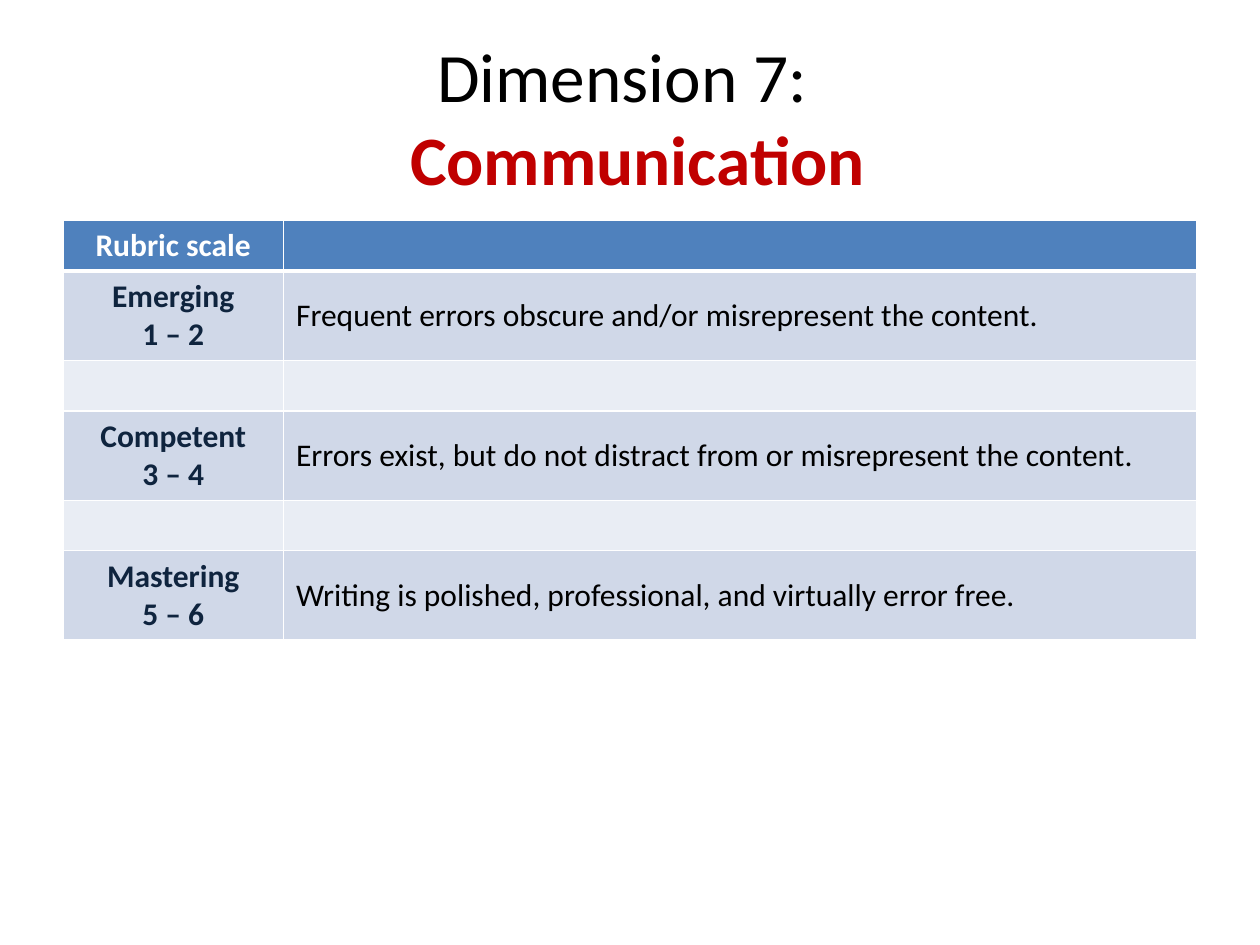
from dataclasses import dataclass

from lxml.etree import SubElement
from pptx import Presentation
from pptx.dml.color import RGBColor
from pptx.enum.text import MSO_ANCHOR as Anchor, PP_ALIGN as Align
from pptx.oxml.ns import qn
from pptx.util import Inches, Pt

FONT = "Calibri"
BLACK = RGBColor(0x00, 0x00, 0x00)
WHITE = RGBColor(0xFF, 0xFF, 0xFF)
RED = RGBColor(0xC0, 0x00, 0x00)
NAVY = RGBColor(0x0F, 0x24, 0x3E)
HEADER_BLUE = RGBColor(0x4F, 0x81, 0xBD)
BAND_DARK = RGBColor(0xD0, 0xD8, 0xE8)
BAND_LIGHT = RGBColor(0xE9, 0xED, 0xF4)

SLIDE_WIDTH, SLIDE_HEIGHT = Inches(10), Inches(7.5)
MARGIN = int(SLIDE_WIDTH * 0.05)
CONTENT_WIDTH = SLIDE_WIDTH - 2 * MARGIN
TITLE_TOP, TITLE_HEIGHT = Inches(0.3), Inches(1.25)
TABLE_TOP = Inches(1.75)
COLUMN_WIDTHS = Inches(1.75), Inches(7.25)
ONE_LINE, TWO_LINES = Inches(0.4), Inches(0.71)

TITLE_FORMAT = {"name": FONT, "size": Pt(39.6)}
CELL_FORMAT = {"name": FONT, "size": Pt(18)}


@dataclass(frozen=True)
class RubricRow:
    height: int
    fill: RGBColor
    level: tuple[str, ...] = ("",)
    description: str = ""
    level_color: RGBColor = NAVY
    anchor: Anchor = Anchor.MIDDLE


HEADER = RubricRow(ONE_LINE, HEADER_BLUE, ("Rubric scale",),
                   level_color=WHITE, anchor=Anchor.TOP)
SPACER = RubricRow(ONE_LINE, BAND_LIGHT)
RUBRIC = [
    HEADER,
    RubricRow(TWO_LINES, BAND_DARK, ("Emerging", "1 – 2"),
              "Frequent errors obscure and/or misrepresent the content."),
    SPACER,
    RubricRow(TWO_LINES, BAND_DARK, ("Competent", "3 – 4"),
              "Errors exist, but do not distract from or misrepresent the content."),
    SPACER,
    RubricRow(TWO_LINES, BAND_DARK, ("Mastering", "5 – 6"),
              "Writing is polished, professional, and virtually error free."),
]


def format_font(font, color: RGBColor, bold: bool, values: dict) -> None:
    for attribute, value in {**values, "bold": bold}.items():
        setattr(font, attribute, value)
    font.color.rgb = color


def add_title(slide) -> None:
    title = slide.shapes.add_textbox(MARGIN, TITLE_TOP, CONTENT_WIDTH, TITLE_HEIGHT)
    frame = title.text_frame
    frame.word_wrap = True
    frame.vertical_anchor = Anchor.MIDDLE
    heading = frame.paragraphs[0]
    heading.alignment = Align.CENTER
    format_font(heading.font, BLACK, False, TITLE_FORMAT)

    number = heading.add_run()
    number.text = "Dimension 7: "
    format_font(number.font, BLACK, False, TITLE_FORMAT)
    heading.add_line_break()
    topic = heading.add_run()
    topic.text = " Communication"
    format_font(topic.font, RED, True, TITLE_FORMAT)


def set_borders(cell, top: float, bottom: float) -> None:
    """Draw white cell borders; top and bottom are widths in points."""
    properties = cell._tc.get_or_add_tcPr()
    for side, width in {"L": 1, "R": 1, "T": top, "B": bottom}.items():
        line = SubElement(properties, qn(f"a:ln{side}"), w=str(Pt(width)))
        fill = SubElement(line, qn("a:solidFill"))
        SubElement(fill, qn("a:srgbClr"), val=str(WHITE))


def fill_cell(cell, lines: tuple[str, ...], color: RGBColor, bold: bool,
              alignment: Align) -> None:
    cell.text = "\n".join(lines)
    for paragraph in cell.text_frame.paragraphs:
        paragraph.alignment = alignment
        format_font(paragraph.font, color, bold, CELL_FORMAT)
        for run in paragraph.runs:
            format_font(run.font, color, bold, CELL_FORMAT)


def add_rubric(slide, rubric: list[RubricRow]) -> None:
    table = slide.shapes.add_table(
        len(rubric), len(COLUMN_WIDTHS), MARGIN, TABLE_TOP, CONTENT_WIDTH,
        sum(entry.height for entry in rubric)).table
    for column, width in zip(table.columns, COLUMN_WIDTHS):
        column.width = width
    for index, (row, entry) in enumerate(zip(table.rows, rubric)):
        row.height = entry.height
        level, description = row.cells
        fill_cell(level, entry.level, entry.level_color, True, Align.CENTER)
        fill_cell(description, (entry.description,), BLACK, False, Align.LEFT)
        for cell in (level, description):
            cell.vertical_anchor = entry.anchor
            set_borders(cell, top=3 if index == 1 else 1,
                        bottom=3 if index == 0 else 1)
            cell.fill.solid()
            cell.fill.fore_color.rgb = entry.fill


def main() -> None:
    presentation = Presentation()
    presentation.slide_width = SLIDE_WIDTH
    presentation.slide_height = SLIDE_HEIGHT
    slide = presentation.slides.add_slide(presentation.slide_layouts[6])
    add_title(slide)
    add_rubric(slide, RUBRIC)
    presentation.save("out.pptx")


if __name__ == "__main__":
    main()
